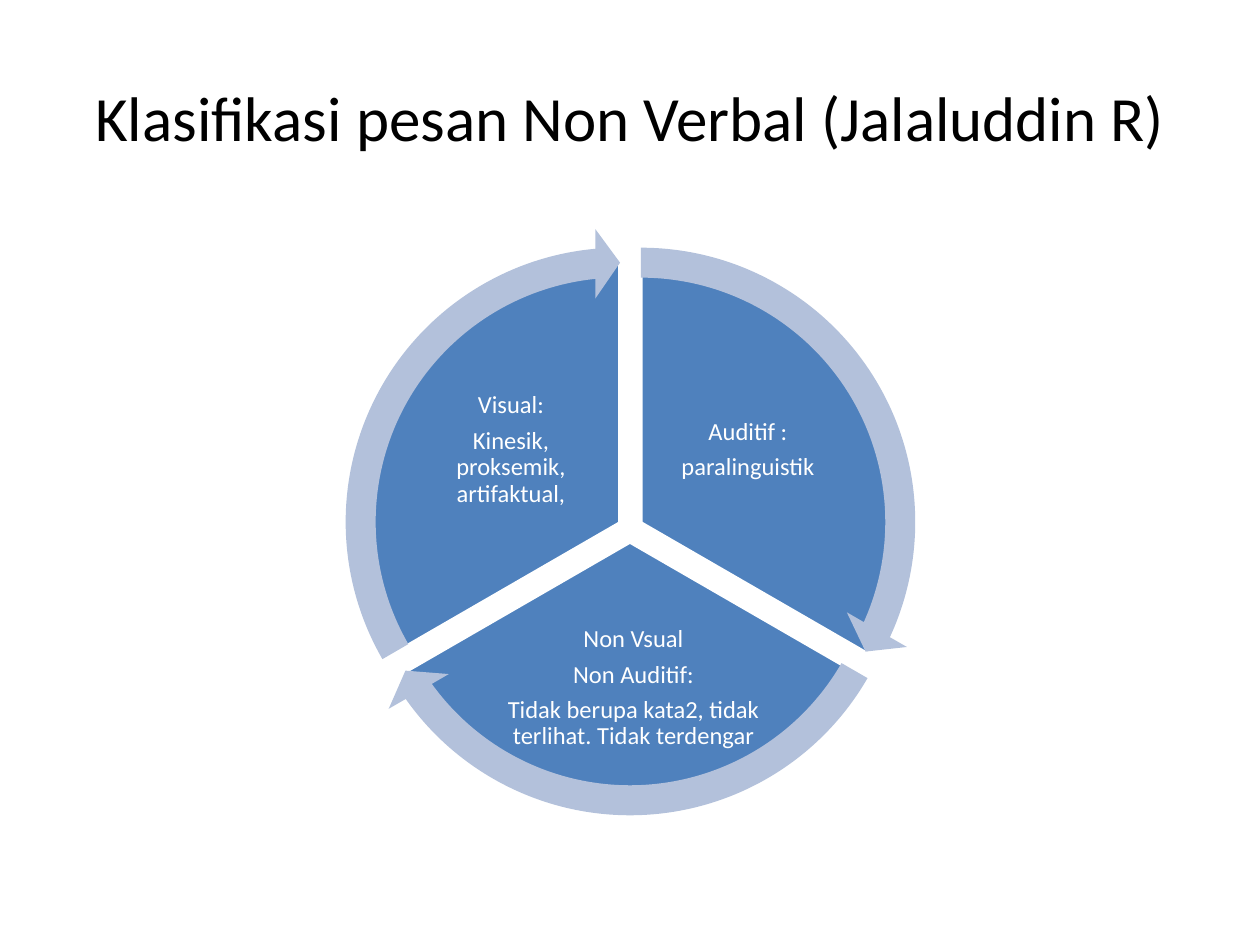
from dataclasses import dataclass

from pptx import Presentation
from pptx.dml.color import RGBColor
from pptx.enum.shapes import MSO_SHAPE
from pptx.enum.text import MSO_ANCHOR, PP_ALIGN
from pptx.shapes.autoshape import Shape
from pptx.shapes.shapetree import GroupShapes
from pptx.text.text import TextFrame
from pptx.util import Emu, Pt

PX = 914400 / 126
PIE_SIZE = 524
ARROW_SIZE = 588
ARROW_OFFSET = (-32, -33)
INSET = 3
WHITE, BLACK, BLUE, PALE_BLUE = "FFFFFF", "000000", "4F81BD", "B3C1DB"
LABEL_FORMAT = {"alignment": PP_ALIGN.CENTER, "line_spacing": 0.9, "space_after": Pt(5)}
TITLE_FORMAT = {"alignment": PP_ALIGN.CENTER}
FRAME_FORMAT = {"word_wrap": True, "vertical_anchor": MSO_ANCHOR.MIDDLE}
INSETS = {f"margin_{side}": Emu(round(INSET * PX)) for side in ("left", "top", "right", "bottom")}


@dataclass(frozen=True)
class Sector:
    """One third of the cycle: its wedge, label and outer arrow."""

    corner: tuple[int, int]
    wedge_angles: tuple[float, float]
    arrow_angles: tuple[float, float]
    label_box: tuple[int, int, int, int]
    lines: tuple[str, ...]


SECTORS = (
    Sector((379, 261), (162, 18), (14.72, 161.99), (655, 372, 186, 156),
           ("Auditif :", "paralinguistik")),
    Sector((368, 280), (18, 90), (86.72, 18), (493, 620, 281, 137),
           ("Non Vsual", "Non Auditif:",
            "Tidak berupa kata2, tidak terlihat. Tidak terdengar")),
    Sector((358, 261), (90, 162), (158.73, 90), (418, 372, 186, 156),
           ("Visual:", "Kinesik, proksemik, artifaktual,")),
)


def emu(*lengths: int) -> list[Emu]:
    """Turn pixel lengths into EMU."""
    return [Emu(round(length * PX)) for length in lengths]


def color(code: str) -> RGBColor:
    """Turn a hex string into a colour."""
    return RGBColor.from_string(code)


def apply(target: object, values: dict) -> None:
    """Set every attribute named in a dict of format values."""
    for name, value in values.items():
        setattr(target, name, value)


def write(frame: TextFrame, lines: tuple[str, ...], size: int, ink: str, layout: dict) -> None:
    """Write one paragraph per line with a shared format."""
    apply(frame, FRAME_FORMAT)
    frame.text = "\n".join(lines)
    for paragraph in frame.paragraphs:
        apply(paragraph, layout)
        apply(paragraph.font, {"name": "Calibri", "size": Pt(size)})
        paragraph.font.color.rgb = color(ink)


def draw_form(shapes: GroupShapes, kind: MSO_SHAPE, corner: tuple[int, int], size: int,
              adjustments: tuple[float, ...], fill: str) -> Shape:
    """Draw an adjusted square preset without outline or shadow."""
    form = shapes.add_shape(kind, *emu(*corner, size, size))
    for index, value in enumerate(adjustments):
        form.adjustments[index] = value
    form.shadow.inherit = False
    form.fill.solid()
    form.fill.fore_color.rgb = color(fill)
    form.line.fill.background()
    return form


def draw_wedge(shapes: GroupShapes, sector: Sector) -> None:
    """Draw a white-edged wedge and its label."""
    wedge = draw_form(shapes, MSO_SHAPE.PIE, sector.corner, PIE_SIZE, sector.wedge_angles, BLUE)
    wedge.line.color.rgb = color(WHITE)
    wedge.line.width = Pt(2)
    label = shapes.add_textbox(*emu(*sector.label_box)).text_frame
    apply(label, INSETS)
    write(label, sector.lines, 14, WHITE, LABEL_FORMAT)


def draw_arrow(shapes: GroupShapes, sector: Sector) -> None:
    """Draw the curved arrow around a wedge."""
    left, top = sector.corner
    corner = (left + ARROW_OFFSET[0], top + ARROW_OFFSET[1])
    adjustments = (0.051, 3.275, *sector.arrow_angles, 0.059)
    draw_form(shapes, MSO_SHAPE.CIRCULAR_ARROW, corner, ARROW_SIZE, adjustments, PALE_BLUE)


def main() -> None:
    """Build and save the slide."""
    presentation = Presentation()
    apply(presentation, dict(zip(("slide_width", "slide_height"), emu(1260, 945))))
    slide = presentation.slides.add_slide(presentation.slide_layouts[5])
    slide.background.fill.solid()
    slide.background.fill.fore_color.rgb = color(WHITE)

    title = slide.shapes.title
    apply(title, dict(zip(("left", "top", "width", "height"), emu(63, 38, 1134, 157))))
    write(title.text_frame, ("Klasifikasi pesan Non Verbal (Jalaluddin R)",), 36, BLACK, TITLE_FORMAT)

    cycle = slide.shapes.add_group_shape().shapes
    for draw in (draw_wedge, draw_arrow):
        for sector in SECTORS:
            draw(cycle, sector)
    presentation.save("out.pptx")


if __name__ == "__main__":
    main()
